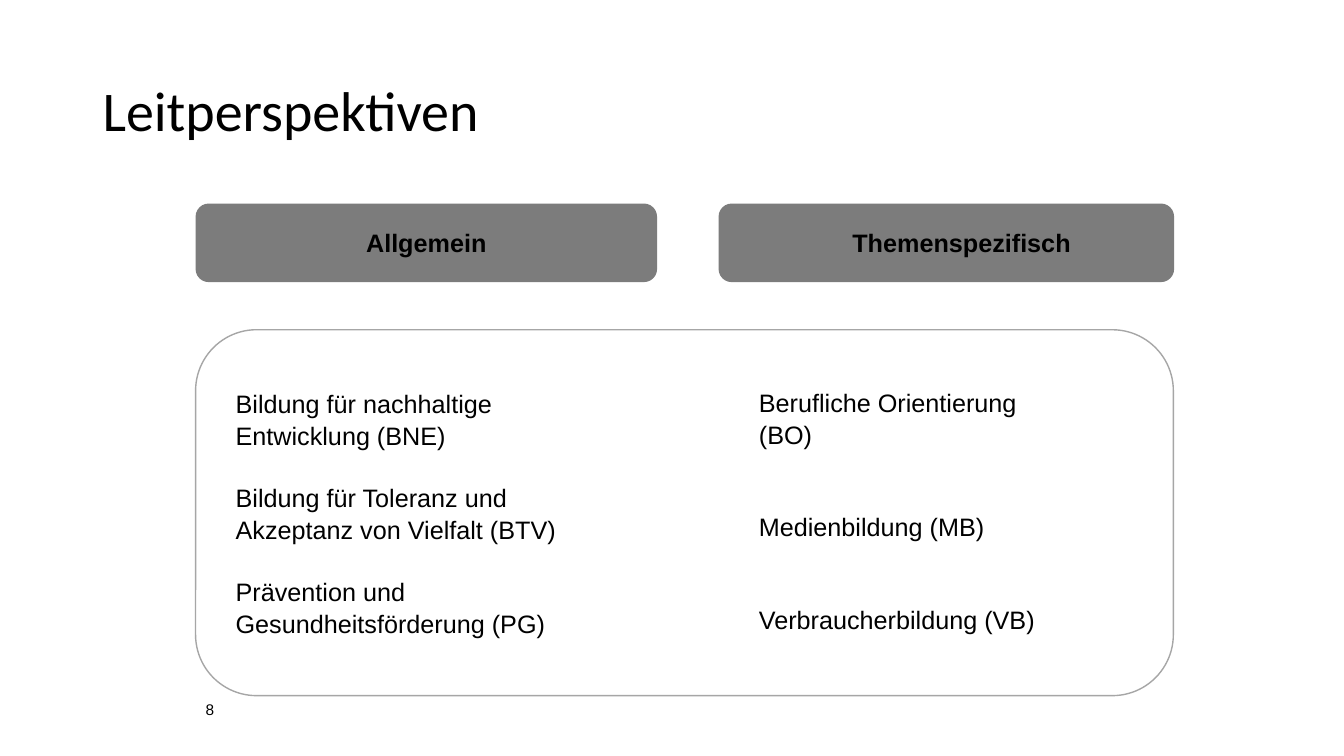
from dataclasses import dataclass

from pptx import Presentation, util as u
from pptx.dml.color import RGBColor
from pptx.enum import shapes, text
from pptx.util import Cm, Pt

BLACK = RGBColor(0x00, 0x00, 0x00)
HEADER_GREY = RGBColor(0x7C, 0x7C, 0x7C)
OUTLINE_GREY = RGBColor(0xA6, 0xA6, 0xA6)

BODY_SIZE = Pt(18)
LINE_SPACING = 1.05
BLANK_LINE = 21.7  # points
INSET = Cm(0.25)
LEFT_COLUMN, RIGHT_COLUMN = Cm(4.93), Cm(18.11)
HEADER_TOP, HEADER_HEIGHT = Cm(5.13), Cm(1.98)


@dataclass
class Line:
    wording: str
    blanks_before: int = 0


@dataclass
class Panel:
    left: u.Length
    top: u.Length
    width: u.Length
    height: u.Length
    lines: list[Line]
    fill: RGBColor | None = None
    outline: RGBColor | None = None
    margin_left: u.Length = INSET
    heading: bool = False


PANELS = [
    Panel(LEFT_COLUMN, Cm(8.31), Cm(24.64), Cm(9.22), [
        Line("Bildung für nachhaltige"),
        Line("Entwicklung (BNE)"),
        Line("Bildung für Toleranz und", 1),
        Line("Akzeptanz von Vielfalt (BTV)"),
        Line("Prävention und", 1),
        Line("Gesundheitsförderung (PG)"),
    ], outline=OUTLINE_GREY, margin_left=Cm(0.56)),
    Panel(RIGHT_COLUMN, Cm(8.18), Cm(9.58), Cm(9.35), [
        Line("Berufliche Orientierung (BO)"),
        Line("Medienbildung (MB)", 2),
        Line("Verbraucherbildung (VB)", 2),
    ], margin_left=Cm(0.56)),
    Panel(RIGHT_COLUMN, HEADER_TOP, Cm(11.48), HEADER_HEIGHT,
          [Line("Themenspezifisch")], fill=HEADER_GREY,
          margin_left=Cm(1.02), heading=True),
    Panel(LEFT_COLUMN, HEADER_TOP, Cm(11.63), HEADER_HEIGHT,
          [Line("Allgemein")], fill=HEADER_GREY, heading=True),
]


def add_span(para, wording: str, size: u.Length, font: str = "Arial",
             bold: bool = False) -> None:
    span = para.add_run()
    span.text = wording
    span.font.name = font
    span.font.size = size
    span.font.bold = bold
    span.font.color.rgb = BLACK


def place(box, left: u.Length, top: u.Length, width: u.Length,
          height: u.Length) -> None:
    box.left, box.top, box.width, box.height = left, top, width, height


def add_title(page) -> None:
    box = page.shapes.title
    place(box, Cm(2.33), Cm(1.01), Cm(29.21), Cm(3.68))
    box.text_frame.vertical_anchor = text.MSO_ANCHOR.MIDDLE
    para = box.text_frame.paragraphs[0]
    para.alignment = text.PP_ALIGN.LEFT
    para.line_spacing = 0.9
    add_span(para, "Leitperspektiven", Pt(40), "Calibri")


def add_page_number(page) -> None:
    box = page.shapes.add_textbox(LEFT_COLUMN, Cm(17.53), Cm(1.4), Cm(1.19))
    box.text_frame.word_wrap = True
    add_span(box.text_frame.paragraphs[0], "8", Pt(11))


def add_panel(page, panel: Panel) -> None:
    box = page.shapes.add_shape(
        shapes.MSO_SHAPE.ROUNDED_RECTANGLE,
        panel.left, panel.top, panel.width, panel.height)
    box.shadow.inherit = False
    if panel.fill is None:
        box.fill.background()
    else:
        box.fill.solid()
        box.fill.fore_color.rgb = panel.fill
    if panel.outline is None:
        box.line.fill.background()
    else:
        box.line.color.rgb = panel.outline
        box.line.width = Pt(1)

    frame = box.text_frame
    frame.word_wrap = True
    frame.vertical_anchor = text.MSO_ANCHOR.MIDDLE
    frame.margin_left = panel.margin_left
    for index, line in enumerate(panel.lines):
        para = frame.add_paragraph() if index else frame.paragraphs[0]
        para.alignment = (text.PP_ALIGN.CENTER if panel.heading
                          else text.PP_ALIGN.LEFT)
        if not panel.heading:
            para.line_spacing = LINE_SPACING
            para.space_before = Pt(BLANK_LINE * line.blanks_before)
        add_span(para, line.wording, BODY_SIZE, bold=panel.heading)


def main() -> None:
    deck = Presentation()
    deck.slide_width, deck.slide_height = Cm(33.87), Cm(19.05)
    page = deck.slides.add_slide(deck.slide_layouts.get_by_name("Title Only"))
    add_title(page)
    add_page_number(page)
    for panel in PANELS:
        add_panel(page, panel)
    deck.save("out.pptx")


if __name__ == "__main__":
    main()
